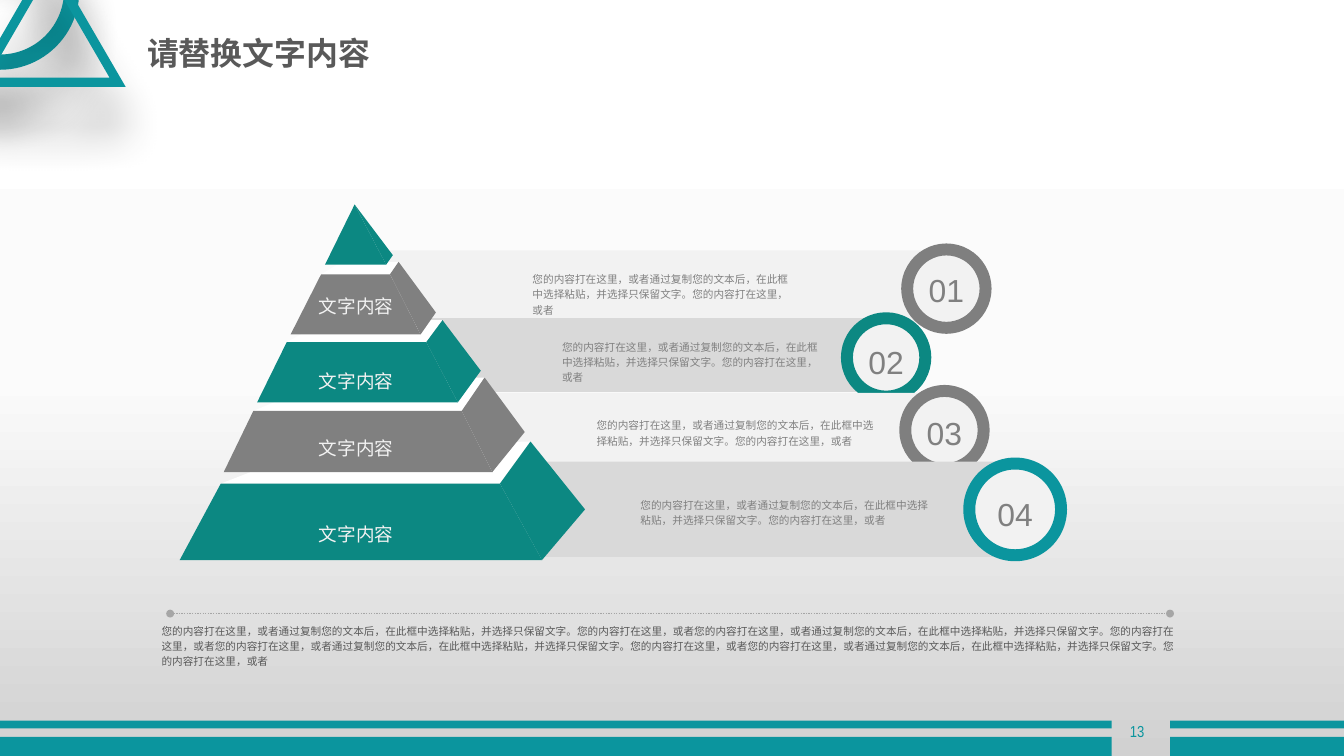
from collections import namedtuple

from lxml.etree import SubElement
from pptx import Presentation
from pptx.dml.color import RGBColor
from pptx.enum.dml import MSO_LINE
from pptx.enum.shapes import MSO_CONNECTOR, MSO_SHAPE as SHAPE
from pptx.enum.text import MSO_ANCHOR as ANCHOR, PP_ALIGN as ALIGN
from pptx.oxml.ns import qn
from pptx.util import Emu, Inches, Pt

COLUMNS, ROWS = 1406, 791
CELL = Inches(0.01)
TEAL, GREEN, GRAY, DARK = "0B959E", "0C8882", "808080", "595959"
LIGHT, SILVER, WHITE = "F2F2F2", "D9D9D9", "FFFFFF"
CHINESE_FONT = "Noto Sans CJK SC"
SENTENCE = "您的内容打在这里，或者通过复制您的文本后，在此框中选择粘贴，并选择只保留文字。您的内容打在这里，或者"

Box = namedtuple("Box", "left top width height")
Band = namedtuple("Band", "box fill text number ring_x ring_y ring_size ring_color number_rise")
Tier = namedtuple("Tier", "bottom_left bottom_right top_left top_right tip peak gap_back color")


def color(hex_string):
    return RGBColor.from_string(hex_string)


def cells(*counts):
    return [Emu(round(count * CELL)) for count in counts]


def style_shape(shape, fill=None, line=None, line_width=0):
    shape.shadow.inherit = False
    if fill:
        shape.fill.solid()
        shape.fill.fore_color.rgb = color(fill)
    else:
        shape.fill.background()
    if line:
        shape.line.color.rgb = color(line)
        shape.line.width = Pt(line_width)
    else:
        shape.line.fill.background()


def add_preset(slide, preset, box, **style):
    shape = slide.shapes.add_shape(preset, *cells(*box))
    style_shape(shape, **style)
    return shape


def add_polygon(slide, origin, points, fill):
    corners = [cells(origin.left + x, origin.top + y) for x, y in points]
    builder = slide.shapes.build_freeform(*corners[0])
    builder.add_line_segments(corners[1:], close=True)
    style_shape(builder.convert_to_shape(), fill)


def add_text(slide, box, text, size, hex_string, font="Arial", bold=False, align=ALIGN.LEFT,
             anchor=ANCHOR.TOP, spacing=1.2, before=0, inset=False, wrap=True):
    frame = slide.shapes.add_textbox(*cells(*box)).text_frame
    frame.text = text
    frame.word_wrap = wrap
    frame.vertical_anchor = anchor
    if not inset:
        frame.margin_left = frame.margin_right = frame.margin_top = frame.margin_bottom = 0
    paragraph = frame.paragraphs[0]
    paragraph.alignment = align
    paragraph.line_spacing = spacing
    paragraph.space_before = Pt(before)
    run = paragraph.runs[0]
    run.font.size = Pt(size)
    run.font.bold = bold
    run.font.name = font
    run.font.color.rgb = color(hex_string)
    SubElement(run.font._element, qn("a:ea"), typeface=CHINESE_FONT)


def add_soft_shadow(shape):
    effects = shape._element.spPr.find(qn("a:effectLst"))
    shadow = SubElement(effects, qn("a:outerShdw"), blurRad=str(Pt(33)), dist=str(Pt(33)),
                        dir="5400000", algn="t", rotWithShape="0")
    shade = SubElement(shadow, qn("a:srgbClr"), val="000000")
    SubElement(shade, qn("a:alpha"), val="43000")


def paint_background(slide):
    fill = slide.background.fill
    fill.gradient()
    fill.gradient_angle = 270
    stops = slide._element.find(".//" + qn("a:gsLst"))
    stops.clear()
    for percent, hex_string in ((0, WHITE), (50, "FBFBFB"), (100, "D1D1D1")):
        stop = SubElement(stops, qn("a:gs"), pos=str(percent * 1000))
        SubElement(stop, qn("a:srgbClr"), val=hex_string)


def draw_header(slide, box):
    ring = add_preset(slide, SHAPE.DONUT, Box(box.left - 83, box.top - 93, 166, 166), fill=TEAL)
    ring.adjustments[0] = 0.096
    triangle = add_preset(slide, SHAPE.ISOSCELES_TRIANGLE,
                          Box(box.left - 21, box.top - 38, 144, 124), line=TEAL, line_width=7)
    SubElement(triangle.line._get_or_add_ln(), qn("a:miter"), lim="800000")
    for shape in (ring, triangle):
        add_soft_shadow(shape)
    add_text(slide, Box(box.left + 144, box.top + 35, 386, 45), "请替换文字内容", 24, DARK,
             font=CHINESE_FONT, bold=True, anchor=ANCHOR.MIDDLE, spacing=0.9, before=10, inset=True)


def draw_footer(slide, box, number):
    gap_left, gap_right = 1163, 1224
    for left, right in ((box.left, gap_left), (gap_right, box.left + box.width)):
        for top, height in ((30, 20), (13, 8)):
            add_preset(slide, SHAPE.RECTANGLE,
                       Box(left, box.top + top, right - left, height), fill=TEAL)
    add_text(slide, Box(gap_left + 1, box.top, 51, 48), number, 12, TEAL, font="Arial Narrow",
             align=ALIGN.CENTER, anchor=ANCHOR.MIDDLE, spacing=1, inset=True)


def draw_band(slide, band):
    box, size = band.box, band.ring_size
    add_preset(slide, SHAPE.RECTANGLE, box, fill=band.fill)
    text = band.text
    add_text(slide, Box(box.left + text.left, box.top + text.top, text.width, text.height),
             SENTENCE, 8, GRAY)
    center_x = box.left + box.width + band.ring_x
    center_y = box.top + box.height / 2 + band.ring_y
    add_preset(slide, SHAPE.OVAL, Box(center_x - size / 2, center_y - size / 2, size, size),
               fill=LIGHT, line=band.ring_color, line_width=9)
    add_text(slide, Box(center_x - 30, center_y - band.number_rise, 60, 48), band.number, 24,
             GRAY, align=ALIGN.CENTER)


def draw_pyramid(slide, box, tiers, label_tops):
    for tier in tiers:
        if tier.gap_back:
            add_polygon(slide, box, (tier.top_left, tier.top_right, tier.peak, tier.gap_back), WHITE)
        add_polygon(slide, box, (tier.bottom_left, tier.bottom_right, tier.top_right, tier.top_left),
                    tier.color)
        add_polygon(slide, box, (tier.bottom_right, tier.tip, tier.peak, tier.top_right), tier.color)
    for top in label_tops:
        add_text(slide, Box(box.left + 145, box.top + top, 79, 26), "文字内容", 14, LIGHT,
                 align=ALIGN.CENTER, wrap=False)


def draw_summary(slide, box):
    rule = slide.shapes.add_connector(MSO_CONNECTOR.STRAIGHT, *cells(
        box.left + 9, box.top, box.left + box.width - 15, box.top))
    rule.line.color.rgb = color("A6A6A6")
    rule.line.width = Pt(1)
    rule.line.dash_style = MSO_LINE.ROUND_DOT
    for end in ("a:headEnd", "a:tailEnd"):
        SubElement(rule.line._get_or_add_ln(), qn(end), type="oval")
    SubElement(rule._element.spPr, qn("a:effectLst"))
    add_text(slide, Box(box.left, box.top + 9, box.width, 48), SENTENCE + SENTENCE * 3, 8, DARK)


BANDS = (
    Band(Box(388, 262, 581, 77), LIGHT, Box(169, 21, 272, 48), "01", 21, 1.5, 82, "7F7F7F", 27),
    Band(Box(438, 333, 488, 77), SILVER, Box(150, 21, 277, 48), "02", 1, 2.5, 82, GREEN, 24),
    Band(Box(494, 411, 474, 75), LIGHT, Box(130, 25, 292, 32), "03", 20, 1.5, 82, "7F7F7F", 25),
    Band(Box(566, 483, 489, 100), SILVER, Box(104, 36, 304, 32), "04", 7, 0, 96, TEAL, 24),
)
APEX = (183, 0)
TIERS = (
    Tier((0, 372), (379, 372), (43, 292), (335, 292), (424, 319), (367, 248), (144, 253), GREEN),
    Tier((46, 280), (327, 280), (77, 216), (295, 216), (361, 238), (319, 181), (153, 184), GRAY),
    Tier((81, 207), (291, 207), (112, 144), (258, 144), (315, 174), (275, 121), (152, 122), GREEN),
    Tier((116, 136), (252, 136), (148, 73), (220, 73), (268, 113), (229, 60), (168, 61), GRAY),
    Tier((152, 63), (216, 63), APEX, APEX, (223, 53), APEX, None, GREEN),
)
LABEL_TOPS = (90, 168, 239, 329)


def main():
    presentation = Presentation()
    presentation.slide_width, presentation.slide_height = cells(COLUMNS, ROWS)
    slide = presentation.slides.add_slide(presentation.slide_layouts[6])
    paint_background(slide)
    draw_header(slide, Box(0, 0, COLUMNS, 90))
    draw_footer(slide, Box(0, 741, COLUMNS, 50), "13")
    for band in BANDS:
        draw_band(slide, band)
    draw_summary(slide, Box(169, 642, 1070, 57))
    draw_pyramid(slide, Box(188, 214, 424, 372), TIERS, LABEL_TOPS)
    presentation.save("out.pptx")


if __name__ == "__main__":
    main()
